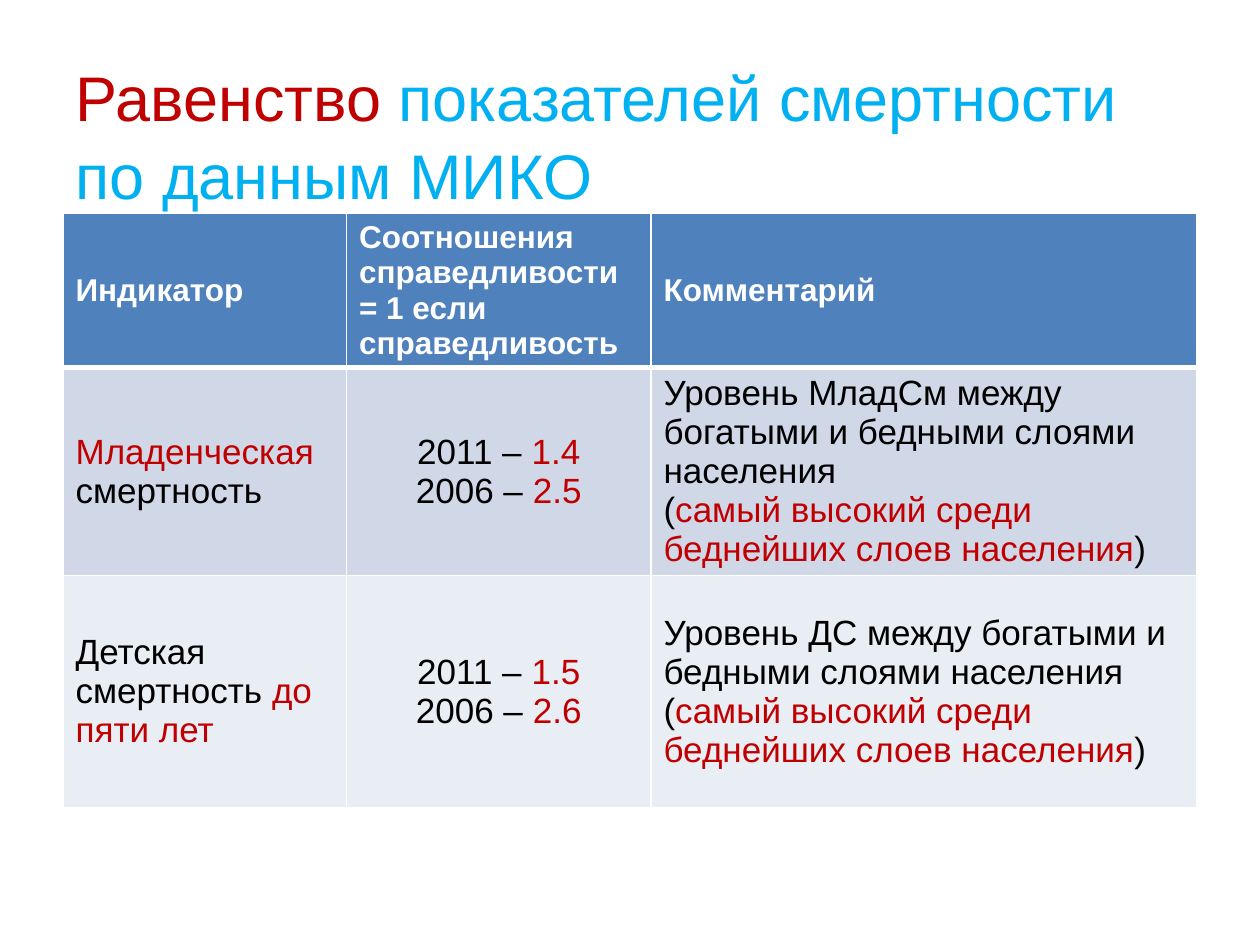
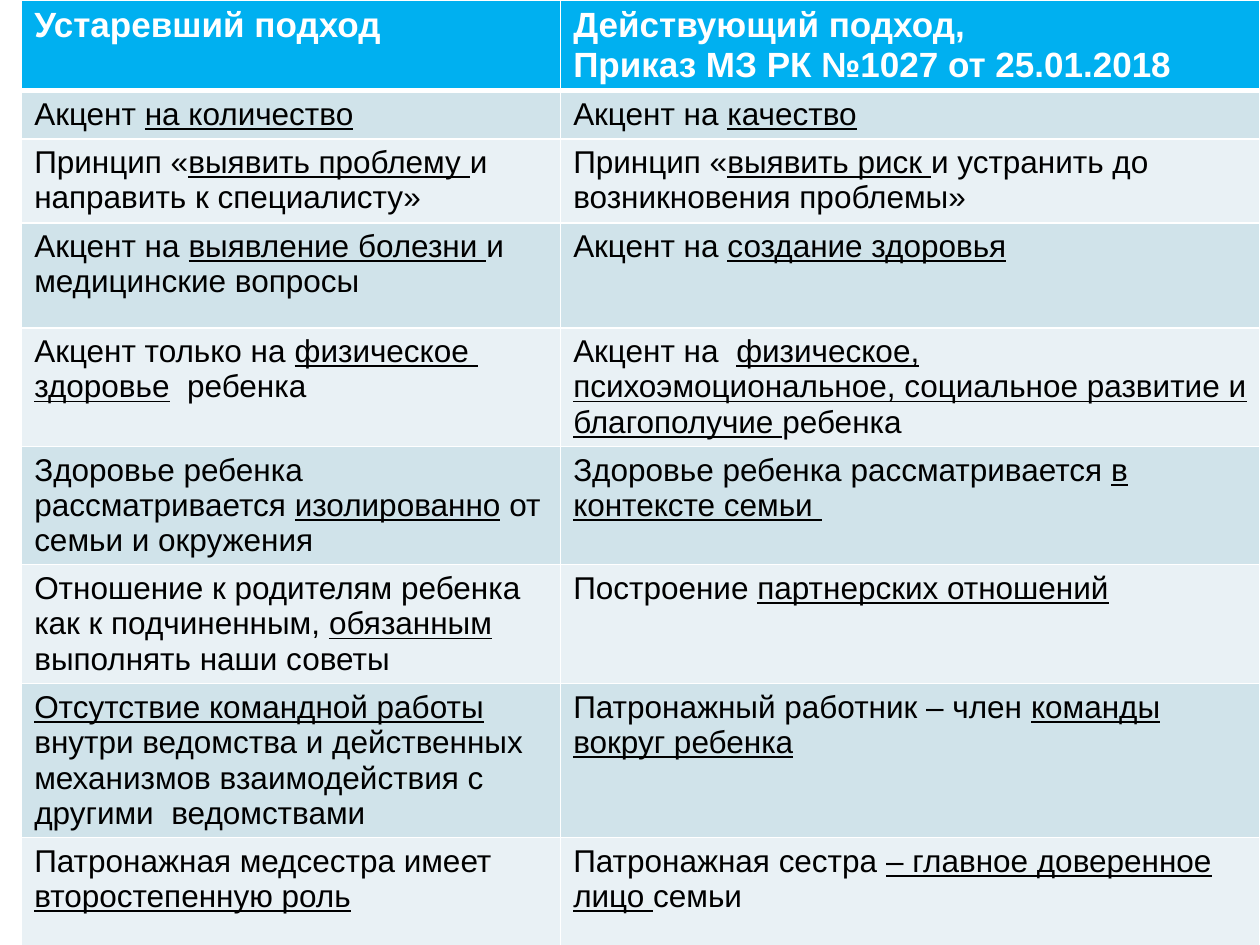
from lxml.etree import SubElement
from pptx import Presentation
from pptx.dml.color import RGBColor
from pptx.enum.text import MSO_ANCHOR as Anchor, PP_ALIGN as Align
from pptx.oxml.ns import qn
from pptx.util import Pt

FONT = "Arial"
COLORS = {
    "white": "FFFFFF",
    "black": "000000",
    "red": "C00000",
    "sky": "00B0F0",
    "blue": "4F81BD",
    "blue_band": "D0D8E8",
    "blue_pale": "E9EDF4",
    "sky_band": "D0E3EA",
    "sky_pale": "E9F1F5",
}


def write_marked(paragraph, text, size, color, bold=False, accent=None):
    for index, part in enumerate(text.split("*")):
        if not part:
            continue
        marked = index % 2 == 1
        run = paragraph.add_run()
        run.text = part
        run.font.name = FONT
        run.font.size = Pt(size)
        run.font.bold = bold
        run.font.underline = marked and accent is None
        run.font.color.rgb = RGBColor.from_string(COLORS[accent if marked and accent else color])


def add_banded_table(slide, left, top, widths, heights, rows, fills, sizes, anchor, accent=None, centered=()):
    frame = slide.shapes.add_table(
        len(rows), len(widths), Pt(left), Pt(top), Pt(sum(widths)), Pt(sum(heights))
    )
    table = frame.table
    for column, width in zip(table.columns, widths):
        column.width = Pt(width)
    for row, height in zip(table.rows, heights):
        row.height = Pt(height)
    for row_index, texts in enumerate(rows):
        header = row_index == 0
        fill = fills[0] if header else fills[2 - row_index % 2]
        for column_index, text in enumerate(texts):
            cell = table.cell(row_index, column_index)
            cell.vertical_anchor = anchor
            properties = cell._tc.get_or_add_tcPr()
            for side in ("lnL", "lnR", "lnT", "lnB"):
                thick = (row_index, side) in ((0, "lnB"), (1, "lnT"))
                line = SubElement(properties, qn(f"a:{side}"), w=str(Pt(3 if thick else 1)))
                solid = SubElement(line, qn("a:solidFill"))
                SubElement(solid, qn("a:srgbClr"), val=COLORS["white"])
            cell.fill.solid()
            cell.fill.fore_color.rgb = RGBColor.from_string(COLORS[fill])
            text_frame = cell.text_frame
            for line_index, line_text in enumerate(text.split("\n")):
                paragraph = text_frame.add_paragraph() if line_index else text_frame.paragraphs[0]
                if column_index in centered and not header:
                    paragraph.alignment = Align.CENTER
                write_marked(
                    paragraph, line_text, sizes[0 if header else 1],
                    "white" if header else "black", header, accent,
                )


presentation = Presentation()
presentation.slide_width = Pt(720)
presentation.slide_height = Pt(540)

equity_slide = presentation.slides.add_slide(presentation.slide_layouts[5])
title = equity_slide.shapes.title
title.left, title.top, title.width, title.height = Pt(36), Pt(31), Pt(630), Pt(94)
title.text_frame.word_wrap = True
title.text_frame.vertical_anchor = Anchor.BOTTOM
title_paragraph = title.text_frame.paragraphs[0]
title_paragraph.alignment = Align.LEFT
title_paragraph.line_spacing = 1.04
write_marked(title_paragraph, "*Равенство* показателей смертности по данным МИКО", 36, "sky", accent="red")

equity_rows = [
    ("Индикатор", "Соотношения справедливости = 1 если справедливость", "Комментарий"),
    (
        "*Младенческая *смертность",
        "2011 – *1.4*\n2006 – *2.5*",
        "Уровень МладСм между богатыми и бедными слоями населения\n"
        "(*самый высокий среди беднейших слоев населения*)",
    ),
    (
        "Детская смертность *до пяти лет*",
        "2011 – *1.5*\n2006 – *2.6*",
        "Уровень ДС между богатыми и бедными слоями населения "
        "(*самый высокий среди беднейших слоев населения*)",
    ),
]
add_banded_table(
    equity_slide, 36, 122, [162, 174, 312], [88, 118, 133], equity_rows,
    ("blue", "blue_band", "blue_pale"), (18, 20), Anchor.MIDDLE, accent="red", centered=(1,),
)

approach_slide = presentation.slides.add_slide(presentation.slide_layouts[6])
approach_rows = [
    ("Устаревший подход", "Действующий подход,\nПриказ МЗ РК №1027 от 25.01.2018"),
    ("Акцент *на количество*", "Акцент на *качество*"),
    (
        "Принцип «*выявить проблему *и направить к специалисту»",
        "Принцип «*выявить риск *и устранить до возникновения проблемы»",
    ),
    ("Акцент на *выявление болезни *и медицинские вопросы", "Акцент на *создание здоровья*"),
    (
        "Акцент только на *физическое  здоровье*  ребенка",
        "Акцент на  *физическое, психоэмоциональное, социальное развитие и благополучие *ребенка",
    ),
    (
        "Здоровье ребенка рассматривается *изолированно* от семьи и окружения",
        "Здоровье ребенка рассматривается *в контексте семьи *",
    ),
    (
        "Отношение к родителям ребенка как к подчиненным, *обязанным *выполнять наши советы",
        "Построение *партнерских отношений*",
    ),
    (
        "*Отсутствие командной работы *внутри ведомства и действенных "
        "механизмов взаимодействия с другими  ведомствами",
        "Патронажный работник – член *команды вокруг ребенка*",
    ),
    (
        "Патронажная медсестра имеет *второстепенную роль*",
        "Патронажная сестра *– главное доверенное лицо *семьи",
    ),
]
add_banded_table(
    approach_slide, 12.4, 0, [308, 399.6], [51.5, 27.5, 48, 60, 67.5, 67.5, 68, 88, 62], approach_rows,
    ("sky", "sky_band", "sky_pale"), (20, 18), Anchor.TOP,
)

presentation.save("out.pptx")
